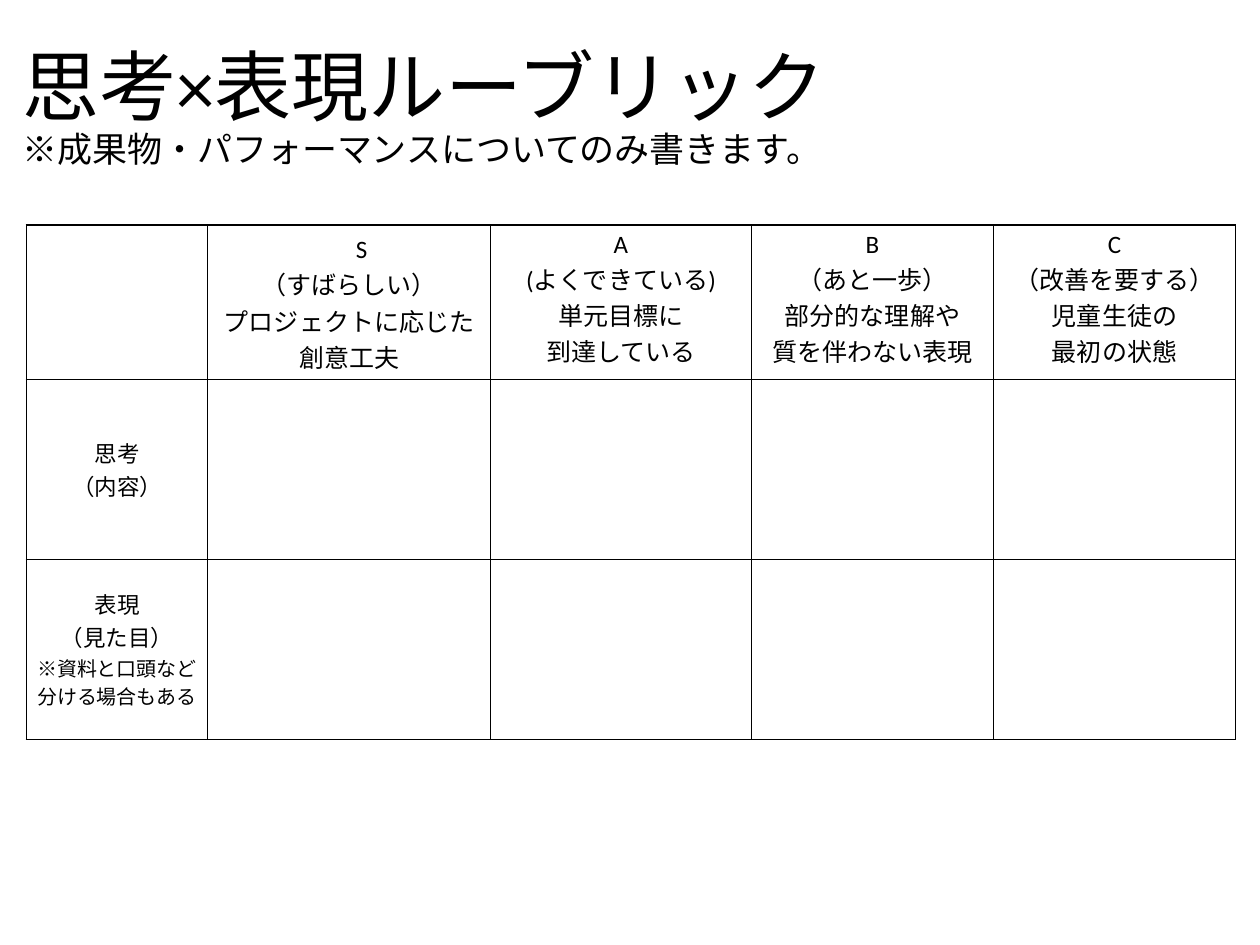
from lxml.etree import SubElement
from pptx import Presentation
from pptx.dml.color import RGBColor
from pptx.enum.text import MSO_ANCHOR as Anchor, MSO_AUTO_SIZE as AutoSize, PP_ALIGN as Align
from pptx.oxml.ns import qn
from pptx.util import Inches, Pt

# Content: a cell is a list of (paragraph lines, size)
HEADING = [("思考×表現ルーブリック", 61.6), ("※成果物・パフォーマンスについてのみ書きます。", 28)]
LEVELS = [
    [(["\u3000S".replace("\u3000", "　"), "（すばらしい）"], 20), (["プロジェクトに応じた創意工夫"], 20)],
    [(["A", "(よくできている)"], 20), (["単元目標に"], 20), (["到達している"], 20)],
    [(["B", "（あと一歩）", "部分的な理解や", "質を伴わない表現"], 20)],
    [(["C", "（改善を要する）"], 20), (["児童生徒の", "最初の状態"], 20)],
]
CRITERIA = [
    [(["思考", "（内容）"], 18)],
    [(["表現", "（見た目）"], 18), (["※資料と口頭など分ける場合もある"], 16)],
]
COLORS = {"ink": "000000", "paper": "FFFFFF"}
FONT = "Calibri"

# Layout, in inches
SLIDE = (14, 10.5)
TITLE_BOX = (0.15, 0.2, 13.56, 2.03)
TABLE_LEFT, TABLE_TOP = 0.29, 2.5
COLUMNS = [2.02, 3.14, 2.9, 2.69, 2.69]
ROWS = [1.51, 2, 2]


def add_text(paragraph, text, size):
    run = paragraph.add_run()
    run.text = text
    run.font.size = Pt(size)
    run.font.name = FONT
    run.font.color.rgb = RGBColor.from_string(COLORS["ink"])


def fill_cell(cell, paragraphs, anchor):
    cell.vertical_anchor = anchor
    frame = cell.text_frame
    for i, (lines, size) in enumerate(paragraphs):
        paragraph = frame.add_paragraph() if i else frame.paragraphs[0]
        paragraph.alignment = Align.CENTER
        for j, line in enumerate(lines):
            if j:
                paragraph.add_line_break()
            add_text(paragraph, line, size)


def style_cell(cell):
    props = cell._tc.get_or_add_tcPr()
    for side in ("a:lnL", "a:lnR", "a:lnT", "a:lnB"):
        border = SubElement(props, qn(side), w=str(Pt(1)))
        color = SubElement(border, qn("a:solidFill"))
        SubElement(color, qn("a:srgbClr"), val=COLORS["ink"])
    cell.fill.solid()
    cell.fill.fore_color.rgb = RGBColor.from_string(COLORS["paper"])


prs = Presentation()
prs.slide_width, prs.slide_height = map(Inches, SLIDE)
slide = prs.slides.add_slide(prs.slide_layouts[5])

# Title with its note on the second line
title = slide.shapes.title
title.left, title.top, title.width, title.height = map(Inches, TITLE_BOX)
title.text_frame.auto_size = AutoSize.NONE
title.text_frame.vertical_anchor = Anchor.MIDDLE
heading = title.text_frame.paragraphs[0]
heading.alignment = Align.LEFT
heading.line_spacing = 0.9
for i, (text, size) in enumerate(HEADING):
    if i:
        heading.add_line_break()
    add_text(heading, text, size)

# Rubric table
rubric = slide.shapes.add_table(
    len(ROWS), len(COLUMNS), Inches(TABLE_LEFT), Inches(TABLE_TOP),
    Inches(sum(COLUMNS)), Inches(sum(ROWS))).table
rubric.first_row = rubric.horz_banding = False
for column, width in zip(rubric.columns, COLUMNS):
    column.width = Inches(width)
for row, height in zip(rubric.rows, ROWS):
    row.height = Inches(height)
for cell in rubric.iter_cells():
    style_cell(cell)
for c, level in enumerate(LEVELS, 1):
    fill_cell(rubric.cell(0, c), level, Anchor.TOP)
for r, criterion in enumerate(CRITERIA, 1):
    fill_cell(rubric.cell(r, 0), criterion, Anchor.MIDDLE)

prs.save("out.pptx")
